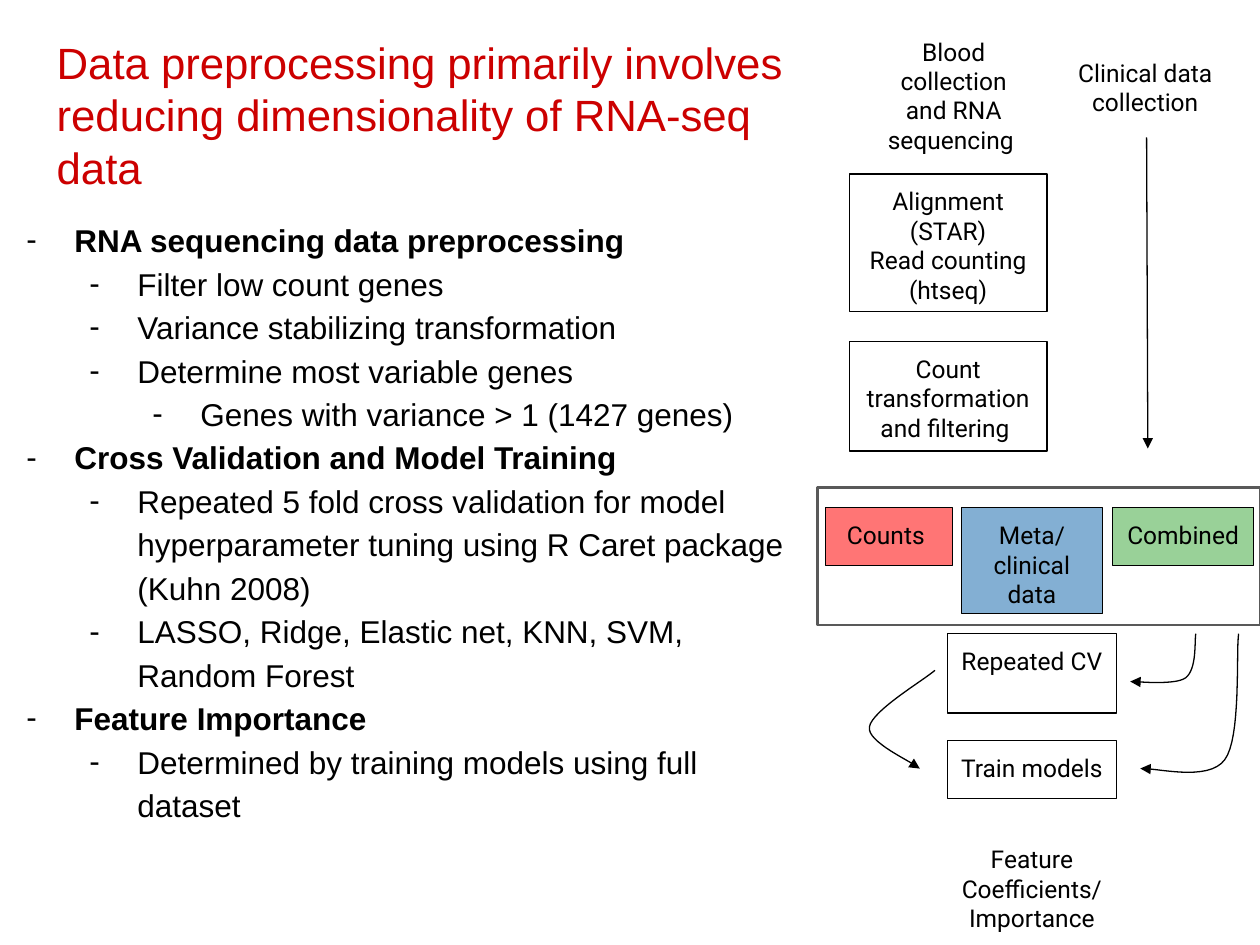
import pptx
import pptx.dml.color
import pptx.enum.shapes
import pptx.enum.text
import pptx.oxml.ns
import pptx.util
from lxml import etree
from pptx.util import Inches

COLORS = {
    "title": "CC0000", "black": "000000", "frame": "595959",
    "counts": "FF0000", "clinical": "377EB8", "combined": "4DAF4A",
}
qn = pptx.oxml.ns.qn


def rgb(name):
    return pptx.dml.color.RGBColor.from_string(COLORS[name])


def write_text(shape, lines, size=14, font="Roboto", color="black", align="CENTER",
               inset=0.1, levels=None, spacing=None):
    """Fill a shape with one paragraph per line; levels makes a dashed outline, bold at level 0."""
    frame = shape.text_frame
    frame.word_wrap = True
    frame.auto_size = pptx.enum.text.MSO_AUTO_SIZE.NONE
    frame.vertical_anchor = pptx.enum.text.MSO_ANCHOR.TOP
    frame.margin_left = frame.margin_right = Inches(inset)
    frame.margin_top = frame.margin_bottom = Inches(inset)
    for index, line in enumerate(lines):
        paragraph = frame.add_paragraph() if index else frame.paragraphs[0]
        paragraph.alignment = getattr(pptx.enum.text.PP_ALIGN, align)
        paragraph.space_before = pptx.util.Pt(0)
        paragraph.line_spacing = spacing
        run = paragraph.add_run()
        run.text = line
        run.font.size = pptx.util.Pt(size)
        run.font.name = font
        run.font.color.rgb = rgb(color)
        if levels:
            level = paragraph.level = levels[index]
            run.font.bold = level == 0
            properties = paragraph._p.get_or_add_pPr()
            properties.set("marL", str(Inches(0.5 * (level + 1))))
            properties.set("indent", str(Inches(-0.38)))
            bullet_color = etree.SubElement(properties, qn("a:buClr"))
            etree.SubElement(bullet_color, qn("a:srgbClr"), val=COLORS["black"])
            etree.SubElement(properties, qn("a:buFont"), typeface="Arial")
            etree.SubElement(properties, qn("a:buChar"), char="-")


def style_arrow(arrow):
    arrow.line.color.rgb = rgb("black")
    arrow.line.width = pptx.util.Pt(0.75)
    etree.SubElement(arrow.line._get_or_add_ln(), qn("a:tailEnd"), type="triangle")


presentation = pptx.Presentation()
presentation.slide_width = Inches(10)
presentation.slide_height = Inches(7.5)
slide = presentation.slides.add_slide(presentation.slide_layouts[1])
shapes = slide.shapes

# Title and outline
title, body = slide.placeholders
title.left, title.top, title.width, title.height = map(Inches, (0.36, 0.19, 6.34, 0.83))
write_text(title, ["Data preprocessing primarily involves reducing dimensionality of RNA-seq data"],
           size=25, font="Arial", color="title", align="LEFT", inset=0.09)

outline = [
    (0, "RNA sequencing data preprocessing"),
    (1, "Filter low count genes"),
    (1, "Variance stabilizing transformation"),
    (1, "Determine most variable genes"),
    (2, "Genes with variance > 1 (1427 genes)"),
    (0, "Cross Validation and Model Training"),
    (1, "Repeated 5 fold cross validation for model hyperparameter tuning "
        "using R Caret package (Kuhn 2008)"),
    (1, "LASSO, Ridge, Elastic net, KNN, SVM, Random Forest"),
    (0, "Feature Importance"),
    (1, "Determined by training models using full dataset"),
]
body.left, body.top, body.width, body.height = map(Inches, (0, 1.62, 6.49, 4.98))
levels, lines = zip(*outline)
write_text(body, lines, size=18, font="Arial", align="LEFT", inset=0.09,
           levels=levels, spacing=1.15)

# Workflow labels
labels = [
    ((6.9, 0.19, 1.34, 0.46), "Blood collection and RNA sequencing "),
    ((8.42, 0.36, 1.34, 0.46), "Clinical data collection"),
    ((7.52, 6.6, 1.34, 0.78), "Feature Coefficients/Importance"),
]
for position, label in labels:
    write_text(shapes.add_textbox(*map(Inches, position)), [label])

# Workflow boxes: position, lines, fill, opacity in percent
boxes = [
    ((6.49, 3.87, 3.51, 1.09), [], None, None),
    ((6.74, 1.38, 1.57, 1.09), ["Alignment (STAR)", "Read counting (htseq)"], None, None),
    ((6.74, 2.71, 1.57, 0.87), ["Count transformation and filtering "], None, None),
    ((6.55, 4.03, 1.01, 0.46), ["Counts "], "counts", 54),
    ((7.63, 4.03, 1.12, 0.84), ["Meta/ clinical data"], "clinical", 62),
    ((8.83, 4.03, 1.12, 0.46), ["Combined"], "combined", 57),
    ((7.52, 5.03, 1.34, 0.63), ["Repeated CV "], None, None),
    ((7.52, 5.88, 1.34, 0.46), ["Train models  "], None, None),
]
for position, lines, fill, opacity in boxes:
    box = shapes.add_shape(pptx.enum.shapes.MSO_SHAPE.RECTANGLE, *map(Inches, position))
    box.shadow.inherit = False
    box.line.color.rgb = rgb("black" if lines else "frame")
    box.line.width = pptx.util.Pt(0.75 if lines else 1.5)
    if fill:
        box.fill.solid()
        box.fill.fore_color.rgb = rgb(fill)
        color_element = box._element.spPr.find(qn("a:solidFill"))[0]
        etree.SubElement(color_element, qn("a:alpha"), val=str(opacity * 1000))
    else:
        box.fill.background()
    write_text(box, lines)

# Straight arrow from clinical data
arrow = shapes.add_connector(pptx.enum.shapes.MSO_CONNECTOR.STRAIGHT,
                             *map(Inches, (9.1, 1.09, 9.11, 3.56)))
style_arrow(arrow)
etree.SubElement(arrow._element.spPr, qn("a:effectLst"))

# Curved arrows: chains of cubic Bezier control points, sampled evenly
curves = [
    [(9.49, 5.03), (9.48, 5.09), (9.5, 5.31), (9.41, 5.38),
     (9.33, 5.44), (9.04, 5.41), (8.97, 5.41)],
    [(9.83, 5.03), (9.81, 5.2), (9.85, 5.86), (9.72, 6.03),
     (9.59, 6.21), (9.16, 6.09), (9.05, 6.1)],
    [(7.42, 5.32), (7.33, 5.4), (6.92, 5.64), (6.9, 5.77),
     (6.88, 5.89), (7.23, 6.04), (7.3, 6.1)],
]
steps = 16
for curve in curves:
    points = []
    for start in range(0, len(curve) - 1, 3):
        controls = curve[start:start + 4]
        for step in range(1, steps + 1):
            t = step / steps
            weights = ((1 - t) ** 3, 3 * t * (1 - t) ** 2, 3 * t ** 2 * (1 - t), t ** 3)
            points.append([Inches(sum(w * value for w, value in zip(weights, axis)))
                           for axis in zip(*controls)])
    builder = shapes.build_freeform(*map(Inches, curve[0]))
    builder.add_line_segments(points, close=False)
    arrow = builder.convert_to_shape()
    arrow.shadow.inherit = False
    arrow.fill.background()
    style_arrow(arrow)

presentation.save("out.pptx")
